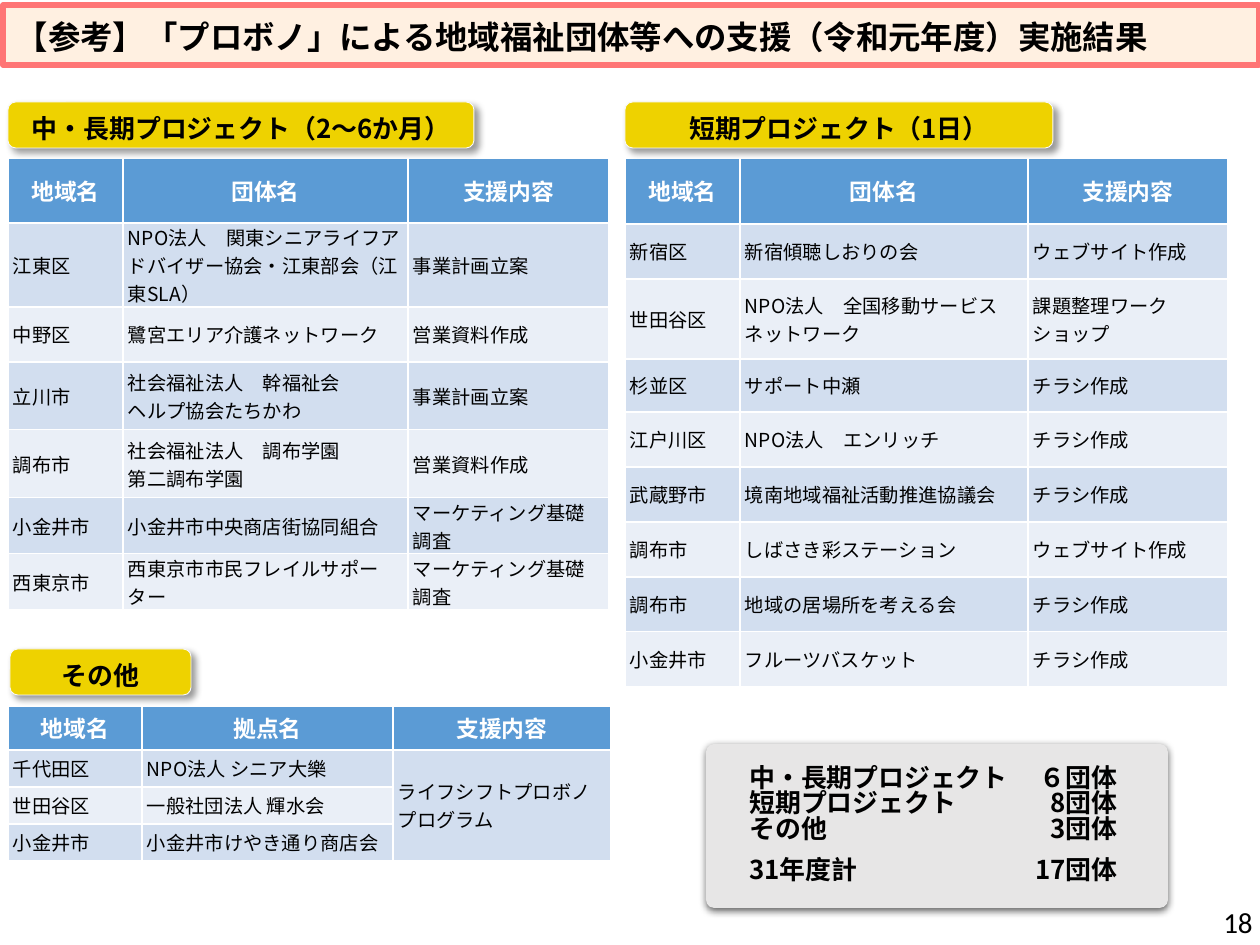
from lxml.etree import SubElement
from pptx import Presentation
from pptx.dml.color import RGBColor
from pptx.enum.shapes import MSO_SHAPE
from pptx.enum.text import MSO_ANCHOR, MSO_AUTO_SIZE, PP_ALIGN
from pptx.oxml.ns import qn
from pptx.util import Emu, Pt

HUES = {"ink": "000000", "white": "FFFFFF", "head": "5B9BD5", "odd": "D2DEEF",
        "even": "EAEFF7", "cream": "FFF0E1", "coral": "FF7575",
        "gold": "EED200", "edge": "F9F9F9", "gray": "E7E6E6"}
RGB = {name: RGBColor.from_string(hue) for name, hue in HUES.items()}
SANS = "Noto Sans CJK JP"


def px(n):
    return Emu(round(n * 914400 / 126))


def write(frame, text, size, hue="ink", bold=True, align=PP_ALIGN.LEFT, face=SANS):
    """Fill a text frame, one paragraph for each line."""
    for i, line in enumerate(text.split("\n")):
        para = frame.paragraphs[0] if i == 0 else frame.add_paragraph()
        para.alignment = align
        run = para.add_run()
        run.text = line
        for key, val in {"size": Pt(size), "bold": bold, "name": face}.items():
            setattr(run.font, key, val)
        run.font.color.rgb = RGB[hue]
        SubElement(run.font._element, qn("a:ea"), typeface=face)


deck = Presentation()
deck.slide_width, deck.slide_height = px(1260), px(945)
slide = deck.slides.add_slide(deck.slide_layouts[5])
shapes = slide.shapes

# Title bar
title = shapes.title
spot = {"left": 3, "top": 5, "width": 1256, "height": 60}
for key, val in spot.items():
    setattr(title, key, px(val))
title.fill.solid()
title.fill.fore_color.rgb = RGB["cream"]
title.line.color.rgb = RGB["coral"]
title.line.width = Pt(3)
frame = title.text_frame
form = {"margin_left": px(13), "margin_top": px(9), "margin_right": px(13),
        "margin_bottom": 0, "vertical_anchor": MSO_ANCHOR.MIDDLE,
        "auto_size": MSO_AUTO_SIZE.NONE, "word_wrap": True}
for key, val in form.items():
    setattr(frame, key, val)
write(frame, "【参考】「プロボノ」による地域福祉団体等への支援（令和元年度）実施結果", 18.5)
frame.paragraphs[0].line_spacing = 0.9

# Tables: left, top, column widths, row heights, rows of text
long = [
    ("地域名", "団体名", "支援内容"),
    ("江東区", "NPO法人　関東シニアライフアドバイザー協会・江東部会（江東SLA）", "事業計画立案"),
    ("中野区", "鷺宮エリア介護ネットワーク", "営業資料作成"),
    ("立川市", "社会福祉法人　幹福祉会\nヘルプ協会たちかわ", "事業計画立案"),
    ("調布市", "社会福祉法人　調布学園\n第二調布学園", "営業資料作成"),
    ("小金井市", "小金井市中央商店街協同組合", "マーケティング基礎調査"),
    ("西東京市", "西東京市市民フレイルサポーター", "マーケティング基礎調査"),
]
short = [
    ("地域名", "団体名", "支援内容"),
    ("新宿区", "新宿傾聴しおりの会", "ウェブサイト作成"),
    ("世田谷区", "NPO法人　全国移動サービスネットワーク", "課題整理ワークショップ"),
    ("杉並区", "サポート中瀬", "チラシ作成"),
    ("江戸川区", "NPO法人　エンリッチ", "チラシ作成"),
    ("武蔵野市", "境南地域福祉活動推進協議会", "チラシ作成"),
    ("調布市", "しばさき彩ステーション", "ウェブサイト作成"),
    ("調布市", "地域の居場所を考える会", "チラシ作成"),
    ("小金井市", "フルーツバスケット", "チラシ作成"),
]
other = [
    ("地域名", "拠点名", "支援内容"),
    ("千代田区", "NPO法人 シニア大樂", "ライフシフトプロボノプログラム"),
    ("世田谷区", "一般社団法人 輝水会", ""),
    ("小金井市", "小金井市けやき通り商店会", ""),
]
grids = [
    (8, 158, (115, 285, 201), (65, 68, 55, 68, 68, 55, 55), long),
    (625, 158, (115, 288, 200), (66, 55, 80, 53) + (55,) * 5, short),
    (8, 706, (134, 251, 218), (44, 37, 37, 37), other),
]
form = {"margin_left": px(5), "margin_right": px(5), "margin_top": 0,
        "margin_bottom": 0, "vertical_anchor": MSO_ANCHOR.MIDDLE}
for left, top, wides, highs, rows in grids:
    table = shapes.add_table(len(rows), len(wides), px(left), px(top),
                             px(sum(wides)), px(sum(highs))).table
    for col, wide in zip(table.columns, wides):
        col.width = px(wide)
    for r, (high, row) in enumerate(zip(highs, rows)):
        table.rows[r].height = px(high)
        for c, text in enumerate(row):
            cell = table.cell(r, c)
            for key, val in form.items():
                setattr(cell, key, val)
            cell.fill.solid()
            band = "head" if r == 0 else "odd" if r % 2 else "even"
            cell.fill.fore_color.rgb = RGB[band]
            if r == 0:
                write(cell.text_frame, text, 13, "white", align=PP_ALIGN.CENTER)
            elif text:
                side = PP_ALIGN.LEFT if c else PP_ALIGN.JUSTIFY
                write(cell.text_frame, text, 11, bold=False, align=side)
    if rows is other:
        table.cell(1, 2).merge(table.cell(3, 2))

# Gold labels and gray totals box: place, text, fill
cards = [
    (8, 102, 466, 46, "中・長期プロジェクト（2～6か月）", "gold"),
    (625, 102, 428, 46, "短期プロジェクト（1日）", "gold"),
    (10, 649, 181, 46, "その他", "gold"),
    (706, 744, 462, 164, "中・長期プロジェクト\t６団体\n短期プロジェクト\t8団体\n"
     "その他\t3団体\n31年度計\t17団体", "gray"),
]
for left, top, wide, high, text, hue in cards:
    card = shapes.add_shape(MSO_SHAPE.ROUNDED_RECTANGLE, px(left), px(top), px(wide), px(high))
    card.shadow.inherit = False
    card.fill.solid()
    card.fill.fore_color.rgb = RGB[hue]
    frame = card.text_frame
    gold = hue == "gold"
    if gold:
        card.line.color.rgb = RGB["edge"]
        card.line.width = Pt(0.5)
        blur, dist, turn, alpha = 4, 3, 45, 40
    else:
        card.line.fill.background()
        card.adjustments[0] = 0.05
        blur, dist, turn, alpha = 4.5, 1.5, 90, 63
    form = {"margin_left": px(13 if gold else 41), "margin_right": px(13),
            "margin_top": px(6), "margin_bottom": px(0 if gold else 6),
            "vertical_anchor": MSO_ANCHOR.MIDDLE, "word_wrap": not gold}
    for key, val in form.items():
        setattr(frame, key, val)
    write(frame, text, 14.8, align=PP_ALIGN.CENTER if gold else PP_ALIGN.LEFT)

    # Soft drop shadow
    glow = SubElement(card._element.spPr.find(qn("a:effectLst")), qn("a:outerShdw"),
                      blurRad=str(Pt(blur)), dist=str(Pt(dist)), dir=str(turn * 60000),
                      algn="t" if turn == 90 else "tl", rotWithShape="0")
    tint = SubElement(glow, qn("a:srgbClr"), val=HUES["ink"])
    SubElement(tint, qn("a:alpha"), val=str(alpha * 1000))

# Counts line up at a right tab, the sum stands apart
for para in frame.paragraphs:
    para.line_spacing = 0.82
    if para.text.startswith("31"):
        para.space_before = Pt(9)
    tabs = SubElement(para._p.get_or_add_pPr(), qn("a:tabLst"))
    SubElement(tabs, qn("a:tab"), pos=str(px(368)), algn="r")

# Page number
page = shapes.add_textbox(px(971), px(898), px(294), px(47)).text_frame
page.word_wrap = True
page.vertical_anchor = MSO_ANCHOR.MIDDLE
write(page, "18", 16.6, bold=False, align=PP_ALIGN.RIGHT, face="Calibri")

deck.save("out.pptx")
